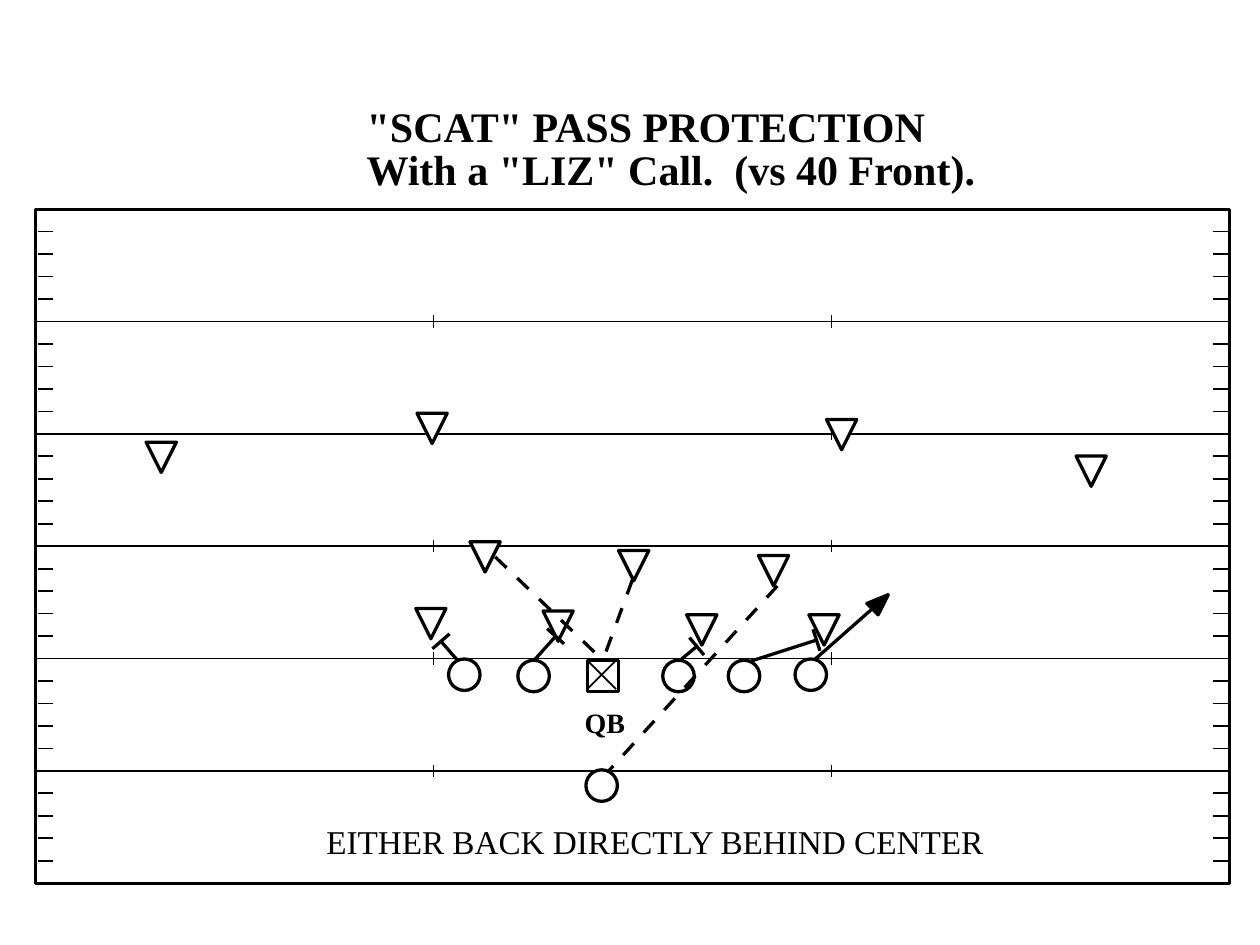
from math import hypot
from typing import NamedTuple

from lxml import etree
from pptx import Presentation
from pptx.dml.color import RGBColor
from pptx.enum.shapes import MSO_CONNECTOR, MSO_SHAPE
from pptx.enum.text import MSO_ANCHOR, PP_ALIGN
from pptx.oxml.ns import qn
from pptx.util import Inches, Pt

BLACK = RGBColor(0, 0, 0)
WHITE = RGBColor(255, 255, 255)
FONT = "Times New Roman"
THIN, THICK = 1, 1.88
STRAIGHT = MSO_CONNECTOR.STRAIGHT
RECT, OVAL, TRIANGLE = MSO_SHAPE.RECTANGLE, MSO_SHAPE.OVAL, MSO_SHAPE.FLOWCHART_MERGE
LEFT, TOP = PP_ALIGN.LEFT, MSO_ANCHOR.TOP

# The slide is a grid of 100 columns by 75 rows
COLS, ROWS = 100, 75
CELL = Inches(0.1)


class Point(NamedTuple):
    col: float
    row: float


class Box(NamedTuple):
    col: float
    row: float
    width: float
    height: float


class Path(NamedTuple):
    start: Point
    end: Point


FIELD = Box(2.8, 16.6, 94.8, 53.5)
BANDS, TICKS_PER_BAND = 6, 5
TICK_COLS = ((3, 4.2), (96.3, 97.5))
HASH_HALF, BAR_HALF = 0.5, 0.9
PLAYER, DEFENDER = 2.5, 2.4

# Top left corners of the players
DEFENDERS = [
    Point(64.2, 48.8), Point(54.5, 48.8), Point(33, 48.3), Point(43.1, 48.5),
    Point(60.2, 44.1), Point(49.1, 43.7), Point(37.3, 43),
    Point(65.6, 33.3), Point(33.1, 32.8), Point(85.4, 36.2), Point(11.6, 35.1),
]
LINEMEN = [Point(35.6, 52.3), Point(41.1, 52.4), Point(52.6, 52.4),
           Point(57.8, 52.4), Point(63.1, 52.3)]
BACK = Point(46.5, 61.1)
CENTER = Point(46.6, 52.4)

BLOCKS = [
    Path(Point(59.5, 52.5), Point(64.8, 50.8)),
    Path(Point(54.1, 52.3), Point(55.3, 51.3)),
    Path(Point(36.3, 52.4), Point(35, 50.9)),
    Path(Point(42.4, 52.4), Point(44.1, 50.5)),
]
BACK_READ = Path(Point(61.7, 46.5), Point(48.3, 61.2))
CENTER_READS = [Point(39.3, 44.2), Point(50.2, 46)]
RELEASE = Path(Point(64.6, 52.4), Point(70.5, 47.2))
RELEASE_HEAD = [Point(70.5, 47.2), Point(68.8, 47.9), Point(69.7, 48.8)]


def grid(*values: float) -> list[int]:
    return [round(v * CELL) for v in values]


def write(sp, text: str, box: Box, size: float, bold: bool = False) -> None:
    sp.left, sp.top, sp.width, sp.height = grid(*box)
    tf = sp.text_frame
    tf.word_wrap = False
    tf.vertical_anchor = TOP
    tf.margin_left = tf.margin_right = tf.margin_bottom = 0
    tf.margin_top = Pt(size * 0.12)
    p = tf.paragraphs[0]
    p.alignment = LEFT
    r = p.add_run()
    r.text = text
    r.font.name, r.font.size, r.font.bold = FONT, Pt(size), bold
    r.font.color.rgb = BLACK


def style(sp, fill: RGBColor | None) -> None:
    sp.shadow.inherit = False
    if fill is None:
        sp.fill.background()
    else:
        sp.fill.solid()
        sp.fill.fore_color.rgb = fill
    sp.line.color.rgb = BLACK
    sp.line.width = Pt(THICK)


def add_shape(s, kind, box: Box, fill: RGBColor | None = WHITE):
    sp = s.shapes.add_shape(kind, *grid(*box))
    style(sp, fill)
    return sp


def add_line(s, start: Point, end: Point, width: float = THICK, dashed: bool = False):
    line = s.shapes.add_connector(STRAIGHT, *grid(*start, *end))
    line.line.color.rgb = BLACK
    line.line.width = Pt(width)
    if dashed:
        dash = etree.SubElement(line.line._get_or_add_ln(), qn("a:custDash"))
        etree.SubElement(dash, qn("a:ds"), d="480000", sp="450000")
    etree.SubElement(line._element.spPr, qn("a:effectLst"))
    return line


def add_block(s, path: Path) -> None:
    """A line that ends in a bar square to it."""
    (x1, y1), (x2, y2) = path
    k = BAR_HALF / hypot(x2 - x1, y2 - y1)
    dx, dy = (y1 - y2) * k, (x2 - x1) * k
    add_line(s, path.start, path.end)
    add_line(s, Point(x2 + dx, y2 + dy), Point(x2 - dx, y2 - dy))


def add_field(s) -> None:
    right = FIELD.col + FIELD.width
    step = FIELD.height / (BANDS * TICKS_PER_BAND)
    for i in range(1, BANDS * TICKS_PER_BAND):
        row = FIELD.row + i * step
        if i % TICKS_PER_BAND:
            for a, b in TICK_COLS:
                add_line(s, Point(a, row), Point(b, row), THIN)
            continue
        add_line(s, Point(FIELD.col, row), Point(right, row), THIN)
        for third in (1, 2):
            col = FIELD.col + FIELD.width * third / 3
            add_line(s, Point(col, row - HASH_HALF), Point(col, row + HASH_HALF), THIN)
    add_shape(s, RECT, FIELD, None)


def main() -> None:
    prs = Presentation()
    prs.slide_width, prs.slide_height = COLS * CELL, ROWS * CELL
    s = prs.slides.add_slide(prs.slide_layouts[5])

    # Title and captions
    write(s.shapes.title, '"SCAT" PASS PROTECTION', Box(29.1, 7.6, 48.2, 4.6), 24, True)
    add_field(s)
    for text, box, size, bold in [
        ('With a "LIZ" Call.  (vs 40 Front).', Box(29.1, 11, 48.4, 4), 24, True),
        ("EITHER BACK DIRECTLY BEHIND CENTER", Box(25.9, 64.9, 56.6, 3.7), 19, False),
        ("QB", Box(46.4, 55.7, 4.1, 3), 16, True),
    ]:
        write(s.shapes.add_textbox(0, 0, 0, 0), text, box, size, bold)

    # Players
    for spot in DEFENDERS:
        add_shape(s, TRIANGLE, Box(*spot, DEFENDER, DEFENDER))
    for spot in [*LINEMEN, BACK]:
        add_shape(s, OVAL, Box(*spot, PLAYER, PLAYER))
    center = add_shape(s, RECT, Box(*CENTER, PLAYER, PLAYER))
    x, y = CENTER
    far = 2.3
    add_line(s, CENTER, Point(x + far, y + far), THIN)
    add_line(s, Point(x, y + far), Point(x + far, y), THIN)

    # Blocks and reads
    for path in BLOCKS:
        add_block(s, path)
    add_line(s, *BACK_READ, dashed=True)
    for start in CENTER_READS:
        add_line(s, start, CENTER, dashed=True).end_connect(center, 0)

    # Release route with its arrowhead
    add_line(s, *RELEASE)
    tip, *others = [grid(*p) for p in RELEASE_HEAD]
    fb = s.shapes.build_freeform(*tip)
    fb.add_line_segments(others, close=True)
    style(fb.convert_to_shape(), BLACK)

    prs.save("out.pptx")


if __name__ == "__main__":
    main()
